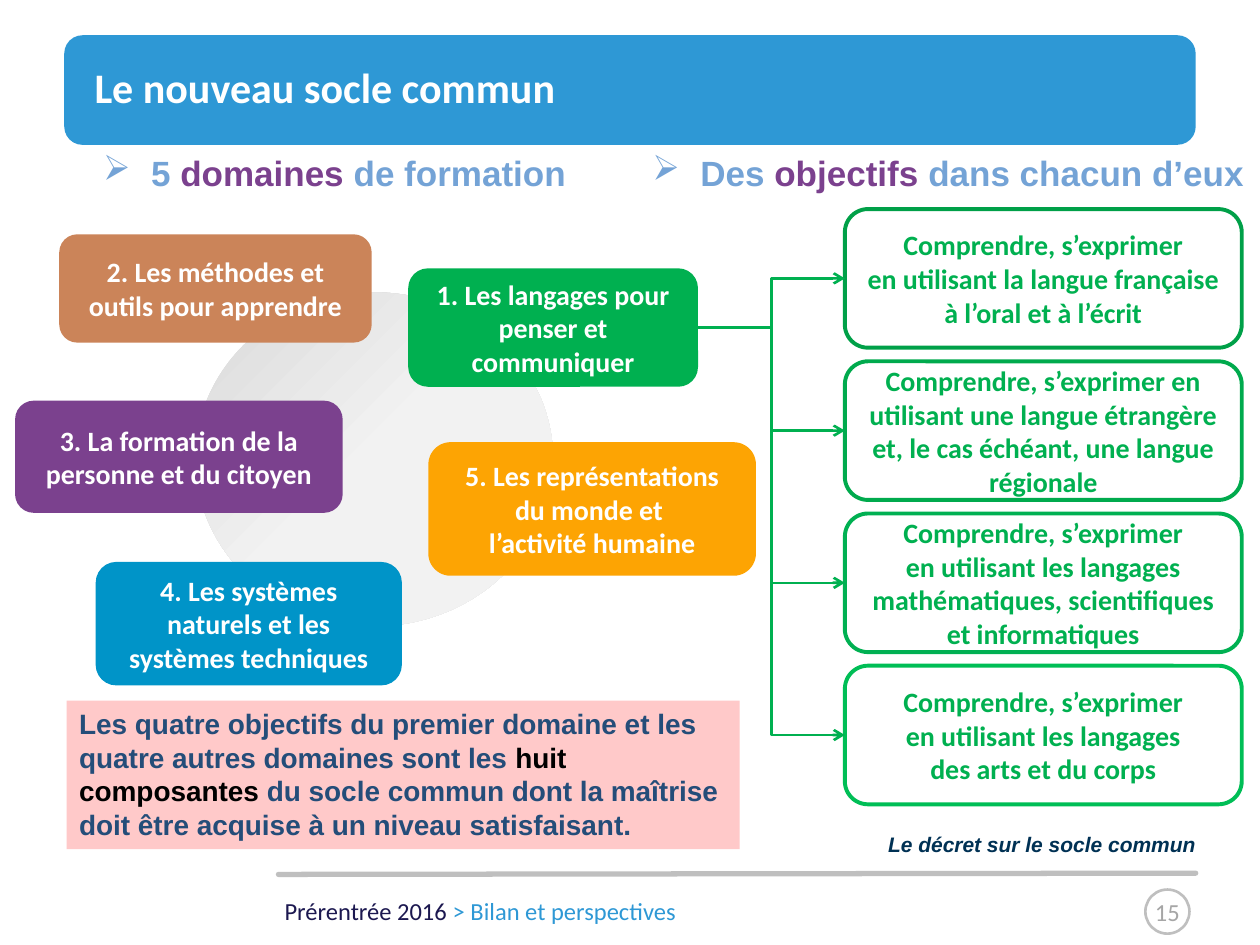
"""Build the slide on the five domains of the "socle commun" and their objectives."""
from pptx import Presentation
from pptx import util as u
from pptx.dml.color import RGBColor
from pptx.enum import shapes, text
from pptx.oxml import parse_xml
from pptx.oxml.ns import nsdecls

WHITE = RGBColor(0xFF, 0xFF, 0xFF)
BLACK = RGBColor(0x00, 0x00, 0x00)
BLUE = RGBColor(0x2E, 0x98, 0xD5)
SKY = RGBColor(0x74, 0xA3, 0xD6)
INDIGO = RGBColor(0x1C, 0x18, 0x50)
NAVY = RGBColor(0x00, 0x31, 0x54)
STEEL = RGBColor(0x24, 0x4D, 0x79)
PURPLE = RGBColor(0x7B, 0x41, 0x8E)
TEAL = RGBColor(0x00, 0x94, 0xC8)
BROWN = RGBColor(0xCB, 0x84, 0x59)
ORANGE = RGBColor(0xFD, 0xA4, 0x03)
GREEN = RGBColor(0x00, 0xB0, 0x50)
PINK = RGBColor(0xFF, 0xC9, 0xC9)
SILVER = RGBColor(0xBF, 0xBF, 0xBF)
GREY = RGBColor(0xA6, 0xA6, 0xA6)
GREENS = [RGBColor(0x00, 0xA0, 0x48), RGBColor(0x00, 0xAA, 0x4D),
          RGBColor(0x00, 0xB0, 0x52), RGBColor(0x00, 0xBE, 0x56)]

KIND = shapes.MSO_SHAPE
CENTER, LEFT = text.PP_ALIGN.CENTER, text.PP_ALIGN.LEFT
MIDDLE, TOP = text.MSO_ANCHOR.MIDDLE, text.MSO_ANCHOR.TOP

prs = Presentation()
prs.slide_width, prs.slide_height = u.Inches(10), u.Inches(7.5)
COL, ROW = prs.slide_width / 100, prs.slide_height / 75
s = prs.slides.add_slide(prs.slide_layouts[5])


def grid(x, y, w, h):
    return int(x * COL), int(y * ROW), int(w * COL), int(h * ROW)


def write(sp, runs, align=LEFT, anchor=TOP, wrap=True, **font):
    tf = sp.text_frame
    tf.word_wrap, tf.vertical_anchor = wrap, anchor
    p = tf.paragraphs[0]
    p.alignment = align
    for words, color in runs:
        for i, line in enumerate(words.split("\n")):
            if i:
                p.add_line_break()
            r = p.add_run()
            r.text = line
            for name, value in font.items():
                setattr(r.font, name, value)
            r.font.color.rgb = color
    return p


CALIBRI = dict(name="Calibri", size=u.Pt(16), bold=True)
ARIAL = dict(name="Arial", size=u.Pt(16), bold=True)
NO_INSET = dict.fromkeys(
    ["margin_left", "margin_right", "margin_top", "margin_bottom"], 0)

blocks = {}
for key, kind, at, fill, line, width in [
    ("header", KIND.ROUNDED_RECTANGLE, (5.1, 2.8, 89.8, 8.7), BLUE, None, 0),
    ("number", KIND.OVAL, (90.9, 70.6, 3.5, 3.5), None, SILVER, 1.5),
    ("disc", KIND.OVAL, (15.5, 23.2, 28.4, 26.5), WHITE, None, 0),
    ("systems", KIND.ROUNDED_RECTANGLE, (7.6, 44.6, 24.3, 9.8), TEAL, None, 0),
    ("citizen", KIND.ROUNDED_RECTANGLE, (1.2, 31.8, 26, 8.9), PURPLE, None, 0),
    ("methods", KIND.ROUNDED_RECTANGLE, (4.7, 18.6, 24.8, 8.6), BROWN, None, 0),
    ("world", KIND.ROUNDED_RECTANGLE, (34, 35.1, 26, 10.6), ORANGE, None, 0),
    ("languages", KIND.ROUNDED_RECTANGLE, (32.4, 21.3, 23, 9.4), GREEN, None, 0),
    ("summary", KIND.RECTANGLE, (5.3, 55.6, 53.4, 11.8), PINK, None, 0),
] + [
    (f"goal{i}", KIND.ROUNDED_RECTANGLE, (67.05, 16.6 + 12.08 * i, 31.5, 11),
     None, green, 2.25) for i, green in enumerate(GREENS)
]:
    sp = blocks[key] = s.shapes.add_shape(kind, *grid(*at))
    sp.shadow.inherit = False
    if fill is None:
        sp.fill.background()
    else:
        sp.fill.solid()
        sp.fill.fore_color.rgb = fill
    if line is None:
        sp.line.fill.background()
    else:
        sp.line.color.rgb, sp.line.width = line, u.Pt(width)

pr = blocks["disc"]._element.spPr
pr.replace(pr.find("{*}solidFill"), parse_xml(
    f'<a:gradFill {nsdecls("a")}><a:gsLst>'
    '<a:gs pos="0"><a:srgbClr val="F2F2F2"/></a:gs>'
    '<a:gs pos="50000"><a:srgbClr val="F2F2F2"/></a:gs>'
    '<a:gs pos="100000"><a:srgbClr val="D9D9D9"/></a:gs></a:gsLst>'
    '<a:path path="circle"><a:fillToRect l="100000" t="100000"/></a:path>'
    '</a:gradFill>'))

title = s.shapes.title
s.shapes._spTree.append(title._element)
title.left, title.top, title.width, title.height = grid(7.5, 1.8, 87.4, 10.2)
for name, value in NO_INSET.items():
    setattr(title.text_frame, name, value)
write(title, [("Le nouveau socle commun", WHITE)], anchor=MIDDLE,
      **CALIBRI | {"size": u.Pt(24)})

for key, words, color in [
    ("languages", "1. Les langages pour penser et communiquer", WHITE),
    ("methods", "2. Les méthodes et outils pour apprendre", WHITE),
    ("citizen", "3. La formation de la personne et du citoyen", WHITE),
    ("systems", "4. Les systèmes naturels et les systèmes techniques", WHITE),
    ("world", "5. Les représentations du monde et \nl’activité humaine", WHITE),
    ("goal0", "Comprendre, s’exprimer\nen utilisant la langue française "
              "à l’oral et à l’écrit", GREEN),
    ("goal1", "Comprendre, s’exprimer en utilisant une langue étrangère et, "
              "le cas échéant, une langue régionale", GREEN),
    ("goal2", "Comprendre, s’exprimer\nen utilisant les langages "
              "mathématiques, scientifiques et informatiques", GREEN),
    ("goal3", "Comprendre, s’exprimer\nen utilisant les langages\n"
              "des arts et du corps", GREEN),
]:
    write(blocks[key], [(words, color)], CENTER, MIDDLE, **CALIBRI)

write(blocks["summary"], [
    ("Les quatre objectifs du premier domaine et les quatre autres domaines "
     "sont les ", STEEL),
    ("huit composantes", BLACK),
    (" du socle commun dont la maîtrise doit être acquise à un niveau "
     "satisfaisant.", STEEL)], **ARIAL)

for name in ["margin_left", "margin_right"]:
    setattr(blocks["number"].text_frame, name, 0)
write(blocks["number"], [("15", GREY)], CENTER, MIDDLE,
      name="Calibri", size=u.Pt(14))

for at, runs, wrap, bullet, font in [
    ((7.2, 11.5, 43.2, 4.4), [("5 ", SKY), ("domaines", PURPLE),
     (" de formation", SKY)], True, True, ARIAL | {"size": u.Pt(20)}),
    ((50.8, 11.5, 49.3, 4.4), [("Des ", SKY), ("objectifs ", PURPLE),
     ("dans chacun d’eux", SKY)], False, True, ARIAL | {"size": u.Pt(20)}),
    ((69.5, 65.5, 26.7, 3), [("Le décret sur le socle commun", NAVY)],
     False, False, ARIAL | {"size": u.Pt(12), "italic": True}),
    ((21.6, 70.6, 59.1, 3.4), [("Prérentrée 2016 ", INDIGO),
     ("> Bilan et perspectives", BLUE)], True, False,
     {"name": "Calibri", "size": u.Pt(14)}),
]:
    p = write(s.shapes.add_textbox(*grid(*at)), runs, wrap=wrap, **font)
    if bullet:
        pPr = p._p.get_or_add_pPr()
        pPr.set("marL", str(int(3.8 * COL)))
        pPr.set("indent", str(int(-3.8 * COL)))
        pPr.append(parse_xml(f'<a:buChar {nsdecls("a")} char="➢"/>'))

links = []
for i in range(len(GREENS)):
    cx = s.shapes.add_connector(shapes.MSO_CONNECTOR.ELBOW, 0, 0, 0, 0)
    cx.begin_connect(blocks["languages"], 3)
    cx.end_connect(blocks[f"goal{i}"], 1)
    links.append((cx, GREEN, 1.5, True))
rule = s.shapes.add_connector(shapes.MSO_CONNECTOR.STRAIGHT, int(22.1 * COL),
                              int(69.4 * ROW), int(94.9 * COL), int(69.3 * ROW))
links.append((rule, SILVER, 3, False))
for cx, color, width, arrow in links:
    cx.line.color.rgb, cx.line.width = color, u.Pt(width)
    ln = cx.line._get_or_add_ln()
    if arrow:
        ln.append(parse_xml(f'<a:tailEnd {nsdecls("a")} type="arrow"/>'))
    else:
        ln.set("cap", "rnd")
    cx._element.spPr.append(parse_xml(f'<a:effectLst {nsdecls("a")}/>'))

prs.save("out.pptx")
